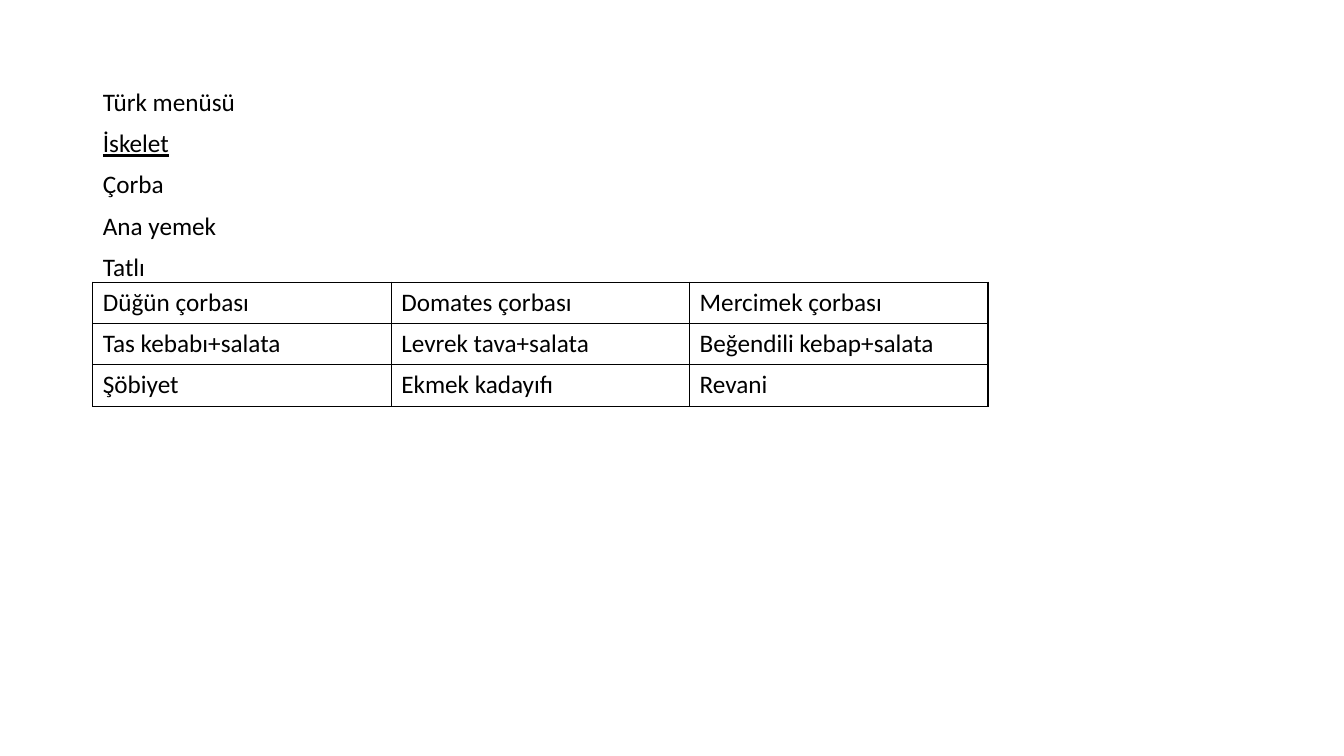
import dataclasses

import lxml.etree
import pptx
import pptx.dml.color
import pptx.enum.text
import pptx.oxml.ns
import pptx.util

EMU_PER_PX = 9144  # 100 px to the inch


def px(length):
    return pptx.util.Emu(length * EMU_PER_PX)


@dataclasses.dataclass(frozen=True)
class Theme:
    font: str = "Calibri"
    text_size: int = 18
    ink: str = "000000"
    border_width: int = 1
    line_spacing: float = 0.9
    space_before: int = 10


class MenuSlide:
    def __init__(self, deck, theme):
        self.theme = theme
        self.slide = deck.slides.add_slide(deck.slide_layouts[1])
        heading = self.slide.shapes.title
        heading.element.getparent().remove(heading.element)

    def add_run(self, paragraph, wording, underline=False):
        run = paragraph.add_run()
        run.text = wording
        run.font.name = self.theme.font
        run.font.size = pptx.util.Pt(self.theme.text_size)
        run.font.color.rgb = pptx.dml.color.RGBColor.from_string(self.theme.ink)
        if underline:
            run.font.underline = True

    def body(self, left, top, width, height, lines, underlined):
        outline = self.slide.placeholders[1]
        outline.left, outline.top = px(left), px(top)
        outline.width, outline.height = px(width), px(height)
        frame = outline.text_frame
        frame.word_wrap = True
        frame.auto_size = pptx.enum.text.MSO_AUTO_SIZE.NONE
        frame.vertical_anchor = pptx.enum.text.MSO_ANCHOR.TOP
        for index, line in enumerate(lines):
            paragraph = frame.add_paragraph() if index else frame.paragraphs[0]
            paragraph.line_spacing = self.theme.line_spacing
            paragraph.space_before = pptx.util.Pt(self.theme.space_before)
            # Plain lines: no bullet, no hanging indent
            properties = paragraph._p.get_or_add_pPr()
            properties.set("marL", "0")
            properties.set("indent", "0")
            lxml.etree.SubElement(properties, pptx.oxml.ns.qn("a:buNone"))
            self.add_run(paragraph, line, line == underlined)

    def border(self, cell):
        properties = cell._tc.get_or_add_tcPr()
        for index, side in enumerate(("lnL", "lnR", "lnT", "lnB")):
            edge = lxml.etree.Element(
                pptx.oxml.ns.qn("a:" + side),
                w=str(pptx.util.Pt(self.theme.border_width)),
            )
            fill = lxml.etree.SubElement(edge, pptx.oxml.ns.qn("a:solidFill"))
            lxml.etree.SubElement(
                fill, pptx.oxml.ns.qn("a:srgbClr"), val=self.theme.ink
            )
            properties.insert(index, edge)

    def table(self, left, top, column_width, row_height, rows):
        columns = len(rows[0])
        grid = self.slide.shapes.add_table(
            len(rows), columns, px(left), px(top),
            px(column_width * columns), px(row_height * len(rows)),
        ).table
        grid.first_row = False
        grid.horz_banding = False
        for row_index, row in enumerate(rows):
            for column_index, dish in enumerate(row):
                cell = grid.cell(row_index, column_index)
                cell.fill.background()
                self.border(cell)
                self.add_run(cell.text_frame.paragraphs[0], dish)


def main():
    deck = pptx.Presentation()
    deck.slide_width, deck.slide_height = px(1333), px(750)
    menu = MenuSlide(deck, Theme())

    # Menu outline
    courses = ["Türk menüsü", "İskelet", "Çorba", "Ana yemek", "Tatlı"]
    menu.body(92, 84, 1150, 602, courses, underlined="İskelet")

    # Three sample menus, one per column
    dishes = [
        ["Düğün çorbası", "Domates çorbası", "Mercimek çorbası"],
        ["Tas kebabı+salata", "Levrek tava+salata", "Beğendili kebap+salata"],
        ["Şöbiyet", "Ekmek kadayıfı", "Revani"],
    ]
    menu.table(92, 280, 296, 41, dishes)

    deck.save("out.pptx")


if __name__ == "__main__":
    main()
